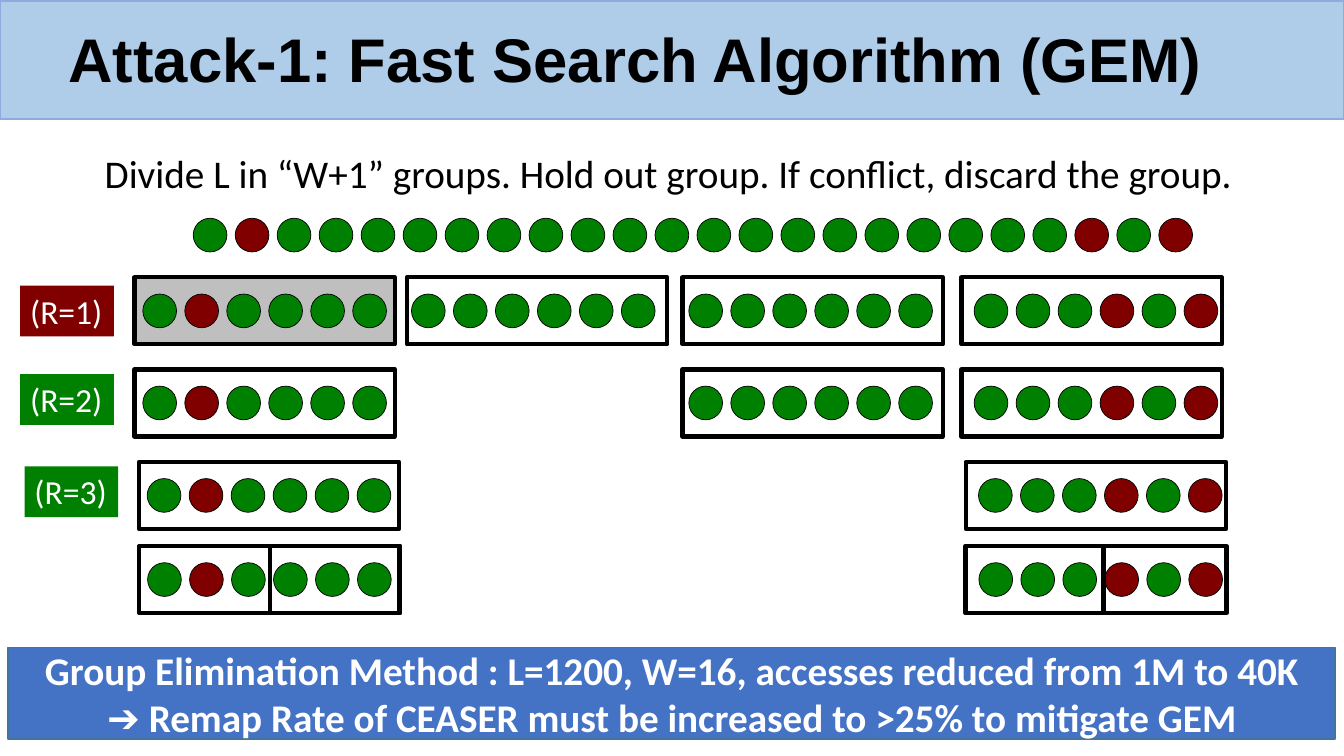
"""Build the slide on the group elimination search algorithm."""
from dataclasses import dataclass

from pptx import Presentation
from pptx.dml.color import RGBColor
from pptx.enum.shapes import MSO_SHAPE
from pptx.enum.text import MSO_ANCHOR, MSO_AUTO_SIZE, PP_ALIGN
from pptx.util import Cm, Pt

RECTANGLE, OVAL = MSO_SHAPE.RECTANGLE, MSO_SHAPE.OVAL
TOP, MIDDLE = MSO_ANCHOR.TOP, MSO_ANCHOR.MIDDLE
LEFT, CENTER = PP_ALIGN.LEFT, PP_ALIGN.CENTER
FIT_SHAPE = MSO_AUTO_SIZE.SHAPE_TO_FIT_TEXT
TITLE_ONLY = 5


@dataclass(frozen=True)
class Theme:
    """Colours, fonts and type sizes of the slide."""
    black: str = "000000"
    white: str = "FFFFFF"
    red: str = "800000"
    green: str = "008000"
    held_out: str = "BFBFBF"
    title_bar: str = "AFCCE9"
    title_edge: str = "8FAADC"
    banner: str = "4472C4"
    banner_edge: str = "43739E"
    heading_font: str = "Arial"
    body_font: str = "Calibri"
    title_size: int = 44
    body_size: int = 28
    label_size: int = 24


THEME = Theme()
BALL, PITCH = 0.85, 1.058
BOX_WIDTH, BOX_HEIGHT = 6.56, 1.69
BALL_DROP = 0.42
GROUPS = ["GRGGGG", "GGGGGG", "GGGGGG", "GGGRGR"]
BOX_LEFTS = [3.39, 10.26, 17.2, 24.23]
BALL_INSETS = [0.21, 0.11, 0.16, 0.32]
ROUNDS = [
    {"top": 6.99, "kept": [0, 1, 2, 3], "held_out": 0},
    {"top": 9.31, "kept": [0, 2, 3]},
    {"top": 11.64, "kept": [0, 3], "shift": 0.11},
    {"top": 13.76, "kept": [0, 3], "shift": 0.12,
     "halves": [(6.81, 3.28), (24.33, 3.48)]},
]
LABELS = [
    ("(R=1)", 0.51, 7.2, THEME.red),
    ("(R=2)", 0.51, 9.43, THEME.green),
    ("(R=3)", 0.62, 11.75, THEME.green),
]


def add_figure(shapes, kind, left, top, width, height, fill=None, line=None, weight=0):
    """Add a flat preset shape with an optional fill and outline."""
    figure = shapes.add_shape(kind, Cm(left), Cm(top), Cm(width), Cm(height))
    figure.shadow.inherit = False
    if fill:
        figure.fill.solid()
        figure.fill.fore_color.rgb = RGBColor.from_string(fill)
    else:
        figure.fill.background()
    if line:
        figure.line.color.rgb = RGBColor.from_string(line)
        figure.line.width = Pt(weight)
    else:
        figure.line.fill.background()
    return figure


def write(holder, text, size, color, font=THEME.body_font, bold=False, align=LEFT,
          spacing=1.0, **frame_format):
    """Put formatted text into a shape, one paragraph per line."""
    frame = holder.text_frame
    frame.text = text
    for name, value in frame_format.items():
        setattr(frame, name, value)
    for paragraph in frame.paragraphs:
        paragraph.alignment = align
        paragraph.line_spacing = spacing
        for run in paragraph.runs:
            run.font.color.rgb = RGBColor.from_string(color)
            for name, value in {"name": font, "size": Pt(size), "bold": bold}.items():
                setattr(run.font, name, value)


def add_title(slide):
    """Format the title and lay its coloured bar behind it."""
    title = slide.shapes.title
    place = {"left": 1.47, "top": 0.58, "width": 31.12, "height": 1.98}
    for name, value in place.items():
        setattr(title, name, Cm(value))
    write(title, "Attack-1: Fast Search Algorithm (GEM)", THEME.title_size, THEME.black,
          THEME.heading_font, bold=True, spacing=0.9, vertical_anchor=MIDDLE)
    bar = add_figure(slide.shapes, RECTANGLE, 0, 0.03, 33.87, 2.97,
                     THEME.title_bar, THEME.title_edge, 1)
    title.element.addprevious(bar.element)


def add_caption(slide):
    """Add the sentence that explains the method."""
    caption = slide.shapes.add_textbox(Cm(2.39), Cm(3.63), Cm(29.34), Cm(1.45))
    write(caption, "Divide L in “W+1” groups. Hold out group. If conflict, discard the group.",
          THEME.body_size, THEME.black, word_wrap=False, auto_size=FIT_SHAPE)


def add_balls(shapes, left, top, pattern):
    """Add a row of balls, red for R and green for G."""
    for index, letter in enumerate(pattern):
        fill = THEME.red if letter == "R" else THEME.green
        add_figure(shapes, OVAL, left + index * PITCH, top, BALL, BALL,
                   fill, THEME.black, 0.5)


def add_box(shapes, left, top, width=BOX_WIDTH, fill=None):
    """Add the heavy outline around a group of balls."""
    add_figure(shapes, RECTANGLE, left, top, width, BOX_HEIGHT, fill, THEME.black, 3)


def add_round(slide, top, kept, held_out=None, shift=0, halves=()):
    """Add the groups that remain in one round of the search."""
    shapes = slide.shapes.add_group_shape().shapes
    for column in kept:
        left = BOX_LEFTS[column] + shift
        add_box(shapes, left, top, fill=THEME.held_out if column == held_out else None)
        add_balls(shapes, left + BALL_INSETS[column], top + BALL_DROP, GROUPS[column])
    for left, width in halves:
        add_box(shapes, left, top, width)


def add_label(slide, text, left, top, fill):
    """Add the coloured tag of a round."""
    label = add_figure(slide.shapes, RECTANGLE, left, top, 2.36, 1.28, fill)
    write(label, text, THEME.label_size, THEME.white, vertical_anchor=TOP,
          word_wrap=False, auto_size=FIT_SHAPE)


def add_banner(slide):
    """Add the conclusion at the foot of the slide."""
    banner = add_figure(slide.shapes, RECTANGLE, 0.2, 16.31, 33.45, 2.31,
                        THEME.banner, THEME.banner_edge, 1)
    write(banner, "Group Elimination Method : L=1200, W=16, accesses reduced from 1M to 40K\n"
          "➔ Remap Rate of CEASER must be increased to >25% to mitigate GEM",
          THEME.body_size, THEME.white, bold=True, align=CENTER, vertical_anchor=MIDDLE)


def main():
    """Build and save the slide."""
    deck = Presentation()
    deck.slide_width, deck.slide_height = Cm(33.87), Cm(19.05)
    slide = deck.slides.add_slide(deck.slide_layouts[TITLE_ONLY])
    add_title(slide)
    add_banner(slide)
    add_caption(slide)
    add_balls(slide.shapes, 4.87, 5.5, "".join(GROUPS))
    for search_round in ROUNDS:
        add_round(slide, **search_round)
    for label in LABELS:
        add_label(slide, *label)
    deck.save("out.pptx")


if __name__ == "__main__":
    main()
